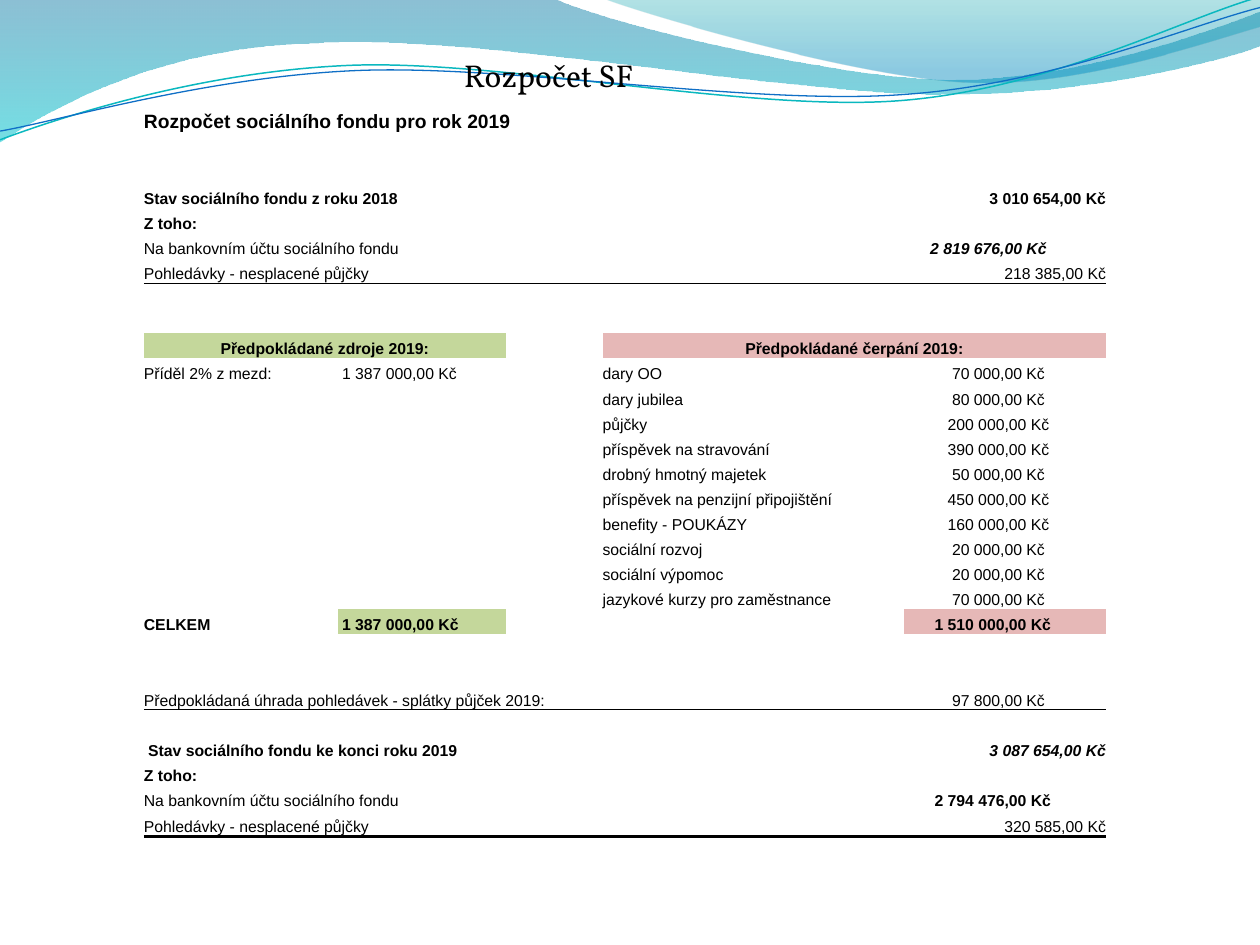
from dataclasses import dataclass
from typing import Optional

from pptx import Presentation
from pptx.dml.color import RGBColor
from pptx.enum.text import MSO_ANCHOR, MSO_AUTO_SIZE, PP_ALIGN
from pptx.oxml import parse_xml
from pptx.oxml.ns import nsdecls, qn
from pptx.util import Pt


@dataclass(frozen=True)
class Theme:
    ink: str = "000000"
    green: str = "C4D79B"
    red: str = "E6B8B7"
    teal_line: str = "0AB8BF"
    blue_line: str = "0F6FC6"
    title_font: str = "Vollkorn"
    body_font: str = "Arial"
    title_size: float = 18
    heading_size: float = 11
    body_size: float = 9


@dataclass(frozen=True)
class Stop:
    pos: int
    color: str
    opacity: int


@dataclass(frozen=True)
class Wave:
    """Outline in points: 2 numbers make a line, 6 make a cubic curve."""
    start: tuple
    segments: list
    stops: tuple = ()
    line: Optional[str] = None
    width: float = 0


@dataclass(frozen=True)
class Entry:
    row: int
    col: int
    text: str
    span: int = 1
    bold: bool = False
    italic: bool = False
    align: PP_ALIGN = PP_ALIGN.LEFT
    indent: float = 0
    fill: Optional[str] = None
    size: float = Theme.body_size


T = Theme()
RIGHT, CENTER = PP_ALIGN.RIGHT, PP_ALIGN.CENTER
NO_STYLE = "{2D5ABB26-0587-4C30-8999-92F81FD0307C}"
SPACE = 2.5  # width of one space in the body text

WAVES = [
    Wave((0, 0), [
        (316.8, -0.7), (342.7, 12.2, 478.1, 45.4, 545.8, 45.4),
        (614.2, 45.4, 689.8, 18.7, 720, 6.5), (720.7, 25.9),
        (707.8, 31.7, 626.4, 54.7, 537.1, 54),
        (447.8, 54, 275, 20.2, 185, 24.5),
        (92.9, 25.9, 33.1, 59.8, -0.7, 81.4)],
        stops=(Stop(0, "0074A1", 45), Stop(100, "00C6CF", 55))),
    Wave((344.9, -0.7), [
        (366.5, 7.9, 491, 44.6, 553.7, 46.8),
        (616.3, 49.7, 691.9, 23, 720, 15.1), (720, 0)],
        stops=(Stop(0, "00A1A9", 30), Stop(80, "008BBF", 45))),
    Wave((0, 79.9), [
        (34.6, 67, 113.8, 41, 199.4, 37.4),
        (284.4, 33.8, 427, 64.1, 513.4, 57.6),
        (599.8, 51.1, 675.4, 10.8, 718.6, -1.4)],
        line=T.teal_line, width=0.85),
    Wave((0, 74.9), [
        (33.8, 69.1, 118.1, 43.9, 203.8, 40.3),
        (290.2, 36.7, 429.8, 60.5, 516.2, 54),
        (601.9, 48.2, 677.5, 15.1, 720, 4.3)],
        line=T.blue_line, width=0.75),
]

COL_WIDTHS = [55.4, 55.4, 96, 55.4, 172.2, 115.4]
ROW_HEIGHTS = [18] + [14.37] * 27 + [15]
RULES = {6: 0.5, 23: 0.5, 28: 2}  # row: width of its bottom border

COSTS = [
    ("dary OO", "70 000,00 Kč"),
    ("dary jubilea", "80 000,00 Kč"),
    ("půjčky", "200 000,00 Kč"),
    ("příspěvek na stravování", "390 000,00 Kč"),
    ("drobný hmotný majetek", "50 000,00 Kč"),
    ("příspěvek na penzijní připojištění", "450 000,00 Kč"),
    ("benefity - POUKÁZY", "160 000,00 Kč"),
    ("sociální rozvoj", "20 000,00 Kč"),
    ("sociální výpomoc", "20 000,00 Kč"),
    ("jazykové kurzy pro zaměstnance", "70 000,00 Kč"),
]


def balance(row: int, label: str, span: int, total: str, bank: str, claims: str,
            total_italic: bool, label_indent: float, bank_indent: float) -> list[Entry]:
    """Four rows: fund balance and what it consists of."""
    return [
        Entry(row, 0, label, span, bold=True, indent=label_indent),
        Entry(row, 5, total, bold=True, italic=total_italic, align=RIGHT),
        Entry(row + 1, 0, "Z toho:", bold=True),
        Entry(row + 2, 0, "Na bankovním účtu sociálního fondu", 3),
        Entry(row + 2, 5, bank, bold=True, italic=not total_italic, indent=bank_indent),
        Entry(row + 3, 0, "Pohledávky - nesplacené půjčky", 3),
        Entry(row + 3, 5, claims, align=RIGHT),
    ]


def cost_rows(first: int) -> list[Entry]:
    entries = []
    for row, (label, amount) in enumerate(COSTS, first):
        spaces = 10 if len(amount) == len("200 000,00 Kč") else 11
        entries += [Entry(row, 4, label), Entry(row, 5, amount, indent=spaces * SPACE)]
    return entries


ENTRIES = [
    Entry(0, 0, "Rozpočet sociálního fondu pro rok 2019", 5, bold=True, size=T.heading_size),
    *balance(3, "Stav sociálního fondu z roku 2018", 3, "3 010 654,00 Kč",
             "2 819 676,00 Kč", "218 385,00 Kč", False, 0, 6 * SPACE),
    Entry(9, 0, "Předpokládané zdroje 2019:", 3, bold=True, align=CENTER, fill=T.green),
    Entry(9, 4, "Předpokládané čerpání 2019:", 2, bold=True, align=CENTER, fill=T.red),
    Entry(10, 0, "Příděl 2% z mezd:", 2),
    Entry(10, 2, "1 387 000,00 Kč", indent=SPACE),
    *cost_rows(10),
    Entry(20, 0, "CELKEM", bold=True),
    Entry(20, 2, "1 387 000,00 Kč", bold=True, indent=SPACE, fill=T.green),
    Entry(20, 5, "1 510 000,00 Kč", bold=True, indent=7 * SPACE, fill=T.red),
    Entry(23, 0, "Předpokládaná úhrada pohledávek - splátky půjček 2019:", 5),
    Entry(23, 5, "97 800,00 Kč", indent=11 * SPACE),
    *balance(25, "Stav sociálního fondu ke konci roku 2019", 4, "3 087 654,00 Kč",
             "2 794 476,00 Kč", "320 585,00 Kč", True, SPACE, 7 * SPACE),
]


def bend(sp, segments: list) -> None:
    """Join each three lines that stand for a curve into one cubic curve."""
    lines = iter(list(sp.element.iter(qn("a:lnTo"))))
    for seg in segments:
        first, *rest = [next(lines) for _ in range(len(seg) // 2)]
        if rest:
            curve = parse_xml(f'<a:cubicBezTo {nsdecls("a")}/>')
            first.addprevious(curve)
            for ln in (first, *rest):
                curve.append(ln[0])
                ln.getparent().remove(ln)


def draw_wave(s, wave: Wave) -> None:
    pts = [(Pt(x), Pt(y)) for seg in wave.segments for x, y in zip(seg[::2], seg[1::2])]
    builder = s.shapes.build_freeform(*map(Pt, wave.start))
    builder.add_line_segments(pts, close=bool(wave.stops))
    sp = builder.convert_to_shape()
    bend(sp, wave.segments)
    sp.shadow.inherit = False
    sp.fill.background()
    if wave.line:
        sp.line.color.rgb = RGBColor.from_string(wave.line)
        sp.line.width = Pt(wave.width)
        return
    sp.line.fill.background()
    stops = "".join(
        f'<a:gs pos="{g.pos * 1000}"><a:srgbClr val="{g.color}">'
        f'<a:alpha val="{g.opacity * 1000}"/></a:srgbClr></a:gs>' for g in wave.stops)
    grad = parse_xml(f'<a:gradFill {nsdecls("a")}><a:gsLst>{stops}</a:gsLst>'
                     '<a:lin ang="5400000" scaled="0"/></a:gradFill>')
    sp_pr = sp.element.spPr
    sp_pr.replace(sp_pr.find(qn("a:noFill")), grad)


def add_run(p, text: str, font: str, size: float, bold=False, italic=False) -> None:
    r = p.add_run()
    r.text = text
    r.font.name, r.font.size = font, Pt(size)
    r.font.bold, r.font.italic = bold, italic
    r.font.color.rgb = RGBColor.from_string(T.ink)


def draw_title(s, text: str) -> None:
    title = s.shapes.title
    title.left, title.top, title.width, title.height = Pt(257.8), Pt(28.4), Pt(118), Pt(28.8)
    tf = title.text_frame
    tf.word_wrap, tf.auto_size = False, MSO_AUTO_SIZE.NONE
    tf.vertical_anchor = MSO_ANCHOR.TOP
    p = tf.paragraphs[0]
    p.alignment = PP_ALIGN.LEFT
    add_run(p, text, T.title_font, T.title_size)
    title.element.getparent().append(title.element)  # in front of the waves


def prepare_cell(cell, rule: Optional[float]) -> None:
    cell.margin_left = cell.margin_right = cell.margin_top = cell.margin_bottom = 0
    cell.vertical_anchor = MSO_ANCHOR.BOTTOM
    cell.fill.background()
    # Keeps empty rows at their height
    cell.text_frame.paragraphs[0]._p.append(
        parse_xml(f'<a:endParaRPr {nsdecls("a")} sz="{int(T.body_size * 100)}"/>'))
    if rule:
        cell._tc.tcPr.insert(0, parse_xml(
            f'<a:lnB {nsdecls("a")} w="{Pt(rule)}"><a:solidFill>'
            f'<a:srgbClr val="{T.ink}"/></a:solidFill></a:lnB>'))


def draw_table(s) -> None:
    gf = s.shapes.add_table(len(ROW_HEIGHTS), len(COL_WIDTHS), Pt(82.2), Pt(57.6),
                            Pt(sum(COL_WIDTHS)), Pt(sum(ROW_HEIGHTS)))
    table = gf.table
    table.first_row = table.horz_banding = False
    table._tbl.tblPr.find(qn("a:tableStyleId")).text = NO_STYLE
    for col, width in zip(table.columns, COL_WIDTHS):
        col.width = Pt(width)
    for i, (row, height) in enumerate(zip(table.rows, ROW_HEIGHTS)):
        row.height = Pt(height)
        for cell in row.cells:
            prepare_cell(cell, RULES.get(i))
    for e in ENTRIES:
        cell = table.cell(e.row, e.col)
        if e.span > 1:
            cell.merge(table.cell(e.row, e.col + e.span - 1))
        cell.margin_left = Pt(e.indent)
        if e.fill:
            cell.fill.solid()
            cell.fill.fore_color.rgb = RGBColor.from_string(e.fill)
        p = cell.text_frame.paragraphs[0]
        p.alignment = e.align
        add_run(p, e.text, T.body_font, e.size, e.bold, e.italic)


if __name__ == "__main__":
    prs = Presentation()
    prs.slide_width, prs.slide_height = Pt(720), Pt(540)
    s = prs.slides.add_slide(prs.slide_layouts[5])
    for wave in WAVES:
        draw_wave(s, wave)
    draw_title(s, "Rozpočet SF")
    draw_table(s)
    prs.save("out.pptx")
